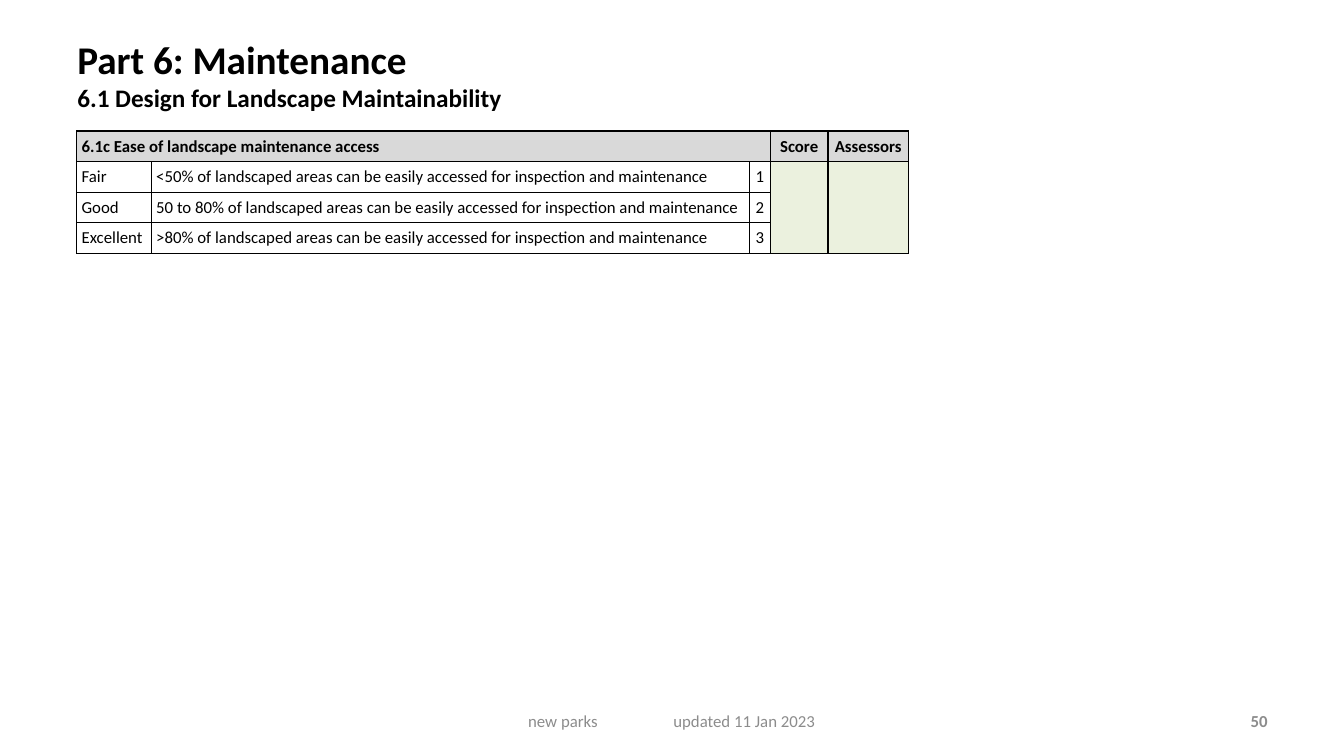
from dataclasses import dataclass

from lxml import etree
from pptx import Presentation
from pptx.dml.color import RGBColor
from pptx.enum.text import MSO_ANCHOR, MSO_AUTO_SIZE, PP_ALIGN
from pptx.oxml.ns import qn
from pptx.util import Inches, Pt

LEFT, MID, RIGHT = PP_ALIGN.LEFT, PP_ALIGN.CENTER, PP_ALIGN.RIGHT
TOP, CENTRE = MSO_ANCHOR.TOP, MSO_ANCHOR.MIDDLE
WIDE, HIGH = Inches(13.33), Inches(7.5)
FONT = "Calibri"
COLORS = {"ink": "000000", "note": "8C8C8C", "head": "D9D9D9", "score": "EBF1DE"}


@dataclass
class Box:
    """A place on the slide, in percent of its width and height."""
    left: float
    top: float
    width: float
    height: float

    def emu(self) -> tuple:
        return across(self.left), down(self.top), across(self.width), down(self.height)


@dataclass
class Note:
    text: str
    box: Box
    align: PP_ALIGN
    bold: bool = False
    inset: float = 0.1
    tab: float = 0


TITLE = Box(5, 4, 77.7, 13.2)
GRID = Box(5.7, 17.33, 61.91, 16.12)
COLS = [5.55, 44.5, 1.58, 4.28, 6]
ALIGNS = [LEFT, LEFT, MID, MID, MID]
ROWS = [
    ["6.1c Ease of landscape maintenance access", "", "", "Score", "Assessors"],
    *([grade, f"{share} of landscaped areas can be easily accessed for "
       "inspection and maintenance", str(mark), "", ""]
      for mark, (grade, share) in enumerate(
          [("Fair", "<50%"), ("Good", "50 to 80%"), ("Excellent", ">80%")], 1)),
]
NOTES = [
    Note("50", Box(71.72, 92.67, 23.33, 5.33), RIGHT, bold=True),
    Note("new parks\tupdated 11 Jan 2023", Box(34.2, 92.67, 31.66, 5.33), LEFT,
         inset=0.68, tab=1.44),
]


def across(share: float) -> int:
    return round(WIDE * share / 100)


def down(share: float) -> int:
    return round(HIGH * share / 100)


def style(font, size: float, color: str, bold: bool = False) -> None:
    font.name, font.size, font.bold = FONT, Pt(size), bold
    font.color.rgb = RGBColor.from_string(COLORS[color])


def add_title(slide) -> None:
    title = slide.shapes.title
    title.left, title.top, title.width, title.height = TITLE.emu()
    frame = title.text_frame
    frame.auto_size = MSO_AUTO_SIZE.NONE
    frame.vertical_anchor = TOP
    para = frame.paragraphs[0]
    para.alignment = LEFT
    head = para.add_run()
    head.text = "Part 6: Maintenance"
    para.add_line_break()
    sub = para.add_run()
    sub.text = "6.1 Design for Landscape Maintainability"
    for run, size in ((head, 28), (sub, 18)):
        style(run.font, size, "ink", True)


def add_note(slide, note: Note) -> None:
    frame = slide.shapes.add_textbox(*note.box.emu()).text_frame
    frame.word_wrap = True
    frame.vertical_anchor = CENTRE
    frame.margin_left = Inches(note.inset)
    para = frame.paragraphs[0]
    para.text = note.text
    para.alignment = note.align
    if note.tab:
        tabs = etree.SubElement(para._p.get_or_add_pPr(), qn("a:tabLst"))
        etree.SubElement(tabs, qn("a:tab"), pos=str(Inches(note.tab)), algn="l")
    style(para.font, 12, "note", note.bold)


def add_edges(cell) -> None:
    """Rule all four sides of a cell; the lines go before its fill."""
    props = cell._tc.get_or_add_tcPr()
    for spot, side in enumerate(("lnL", "lnR", "lnT", "lnB")):
        line = etree.Element(qn(f"a:{side}"), w=str(Pt(1)))
        fill = etree.SubElement(line, qn("a:solidFill"))
        etree.SubElement(fill, qn("a:srgbClr"), val=COLORS["ink"])
        props.insert(spot, line)


def fill_cell(cell, text: str, align: PP_ALIGN, shade: str, bold: bool) -> None:
    cell.margin_left = cell.margin_right = Inches(0.05)
    cell.margin_top = cell.margin_bottom = Inches(0.05)
    cell.vertical_anchor = CENTRE
    para = cell.text_frame.paragraphs[0]
    para.text = text
    para.alignment = align
    style(para.font, 12, "ink", bold)
    if shade:
        cell.fill.solid()
        cell.fill.fore_color.rgb = RGBColor.from_string(COLORS[shade])
    else:
        cell.fill.background()
    add_edges(cell)


def add_grid(slide) -> None:
    table = slide.shapes.add_table(len(ROWS), len(COLS), *GRID.emu()).table
    table.horz_banding = False
    for col, share in zip(table.columns, COLS):
        col.width = across(share)
    for row, texts in enumerate(ROWS):
        table.rows[row].height = down(GRID.height / len(ROWS))
        for col, text in enumerate(texts):
            shade = "head" if row == 0 else "score" if col > 2 else ""
            align = LEFT if row == 0 and col < 3 else ALIGNS[col]
            fill_cell(table.cell(row, col), text, align, shade, row == 0)
    table.cell(0, 0).merge(table.cell(0, 2))
    for col in (3, 4):
        table.cell(1, col).merge(table.cell(3, col))


def main() -> None:
    deck = Presentation()
    deck.slide_width, deck.slide_height = WIDE, HIGH
    slide = deck.slides.add_slide(deck.slide_layouts[5])
    add_title(slide)
    add_grid(slide)
    for note in NOTES:
        add_note(slide, note)
    deck.save("out.pptx")


if __name__ == "__main__":
    main()
